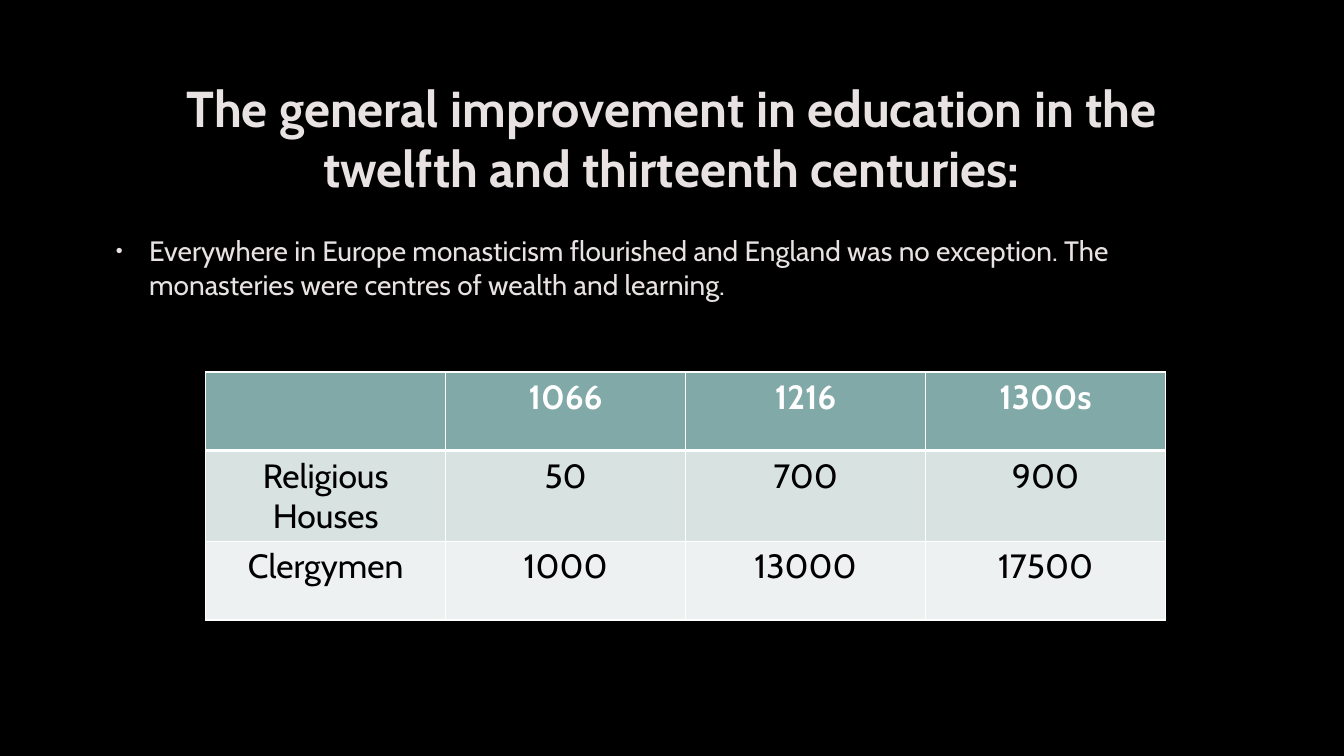
import pptx
import pptx.dml.color
import pptx.enum.text
import pptx.oxml
import pptx.oxml.ns
import pptx.util
from dataclasses import dataclass
from pptx.util import Inches

FONT = "Cabin"
COLORS = {
    "background": "000000",
    "pale": "E8E2E2",
    "outline": "404040",
    "white": "FFFFFF",
    "black": "000000",
    "header": "80A9A7",
    "band_dark": "D8E2E1",
    "band_light": "EDF1F1",
}
ALIGN = pptx.enum.text.PP_ALIGN
ANCHOR = pptx.enum.text.MSO_ANCHOR


@dataclass
class TableRow:
    values: tuple[str, ...]
    fill: str
    color: str = "black"
    bold: bool = False
    bottom_border: float = 1


TABLE_ROWS = [
    TableRow(("", "1066", "1216", "1300s"), "header", "white", True, 3),
    TableRow(("Religious Houses", "50", "700", "900"), "band_dark"),
    TableRow(("Clergymen", "1000", "13000", "17500"), "band_light"),
]


def rgb(name: str) -> pptx.dml.color.RGBColor:
    return pptx.dml.color.RGBColor.from_string(COLORS[name])


def line_xml(tag: str, color: str, width: float, alpha: int = 100):
    """Build a solid line element for text outlines and cell borders."""
    return pptx.oxml.parse_xml(
        f'<a:{tag} {pptx.oxml.ns.nsdecls("a")} w="{int(pptx.util.Pt(width))}">'
        f'<a:solidFill><a:srgbClr val="{COLORS[color]}">'
        f'<a:alpha val="{alpha * 1000}"/></a:srgbClr></a:solidFill></a:{tag}>')


def write(frame, text: str, *, size: float, color: str, bold: bool = False,
          align=ALIGN.LEFT, outlined: bool = False):
    """Write one formatted paragraph and return it."""
    paragraph = frame.paragraphs[0]
    paragraph.alignment = align
    run = paragraph.add_run()
    run.text = text
    run.font.name = FONT
    run.font.size = pptx.util.Pt(size)
    run.font.bold = bold
    run.font.color.rgb = rgb(color)
    if outlined:
        run.font._element.insert(0, line_xml("ln", "outline", 0.75, 10))
    return paragraph


def add_frame(slide, top: float, height: float, anchor):
    frame = slide.shapes.add_textbox(
        Inches(1), Inches(top), Inches(11.32), Inches(height)).text_frame
    frame.word_wrap = True
    frame.vertical_anchor = anchor
    return frame


def add_bullet(paragraph) -> None:
    properties = paragraph._p.get_or_add_pPr()
    properties.set("marL", str(int(Inches(0.38))))
    properties.set("indent", str(int(Inches(-0.33))))
    for bullet_part in (
            f'<a:buClr {{ns}}><a:srgbClr val="{COLORS["pale"]}"/></a:buClr>',
            '<a:buSzPct {ns} val="70000"/>',
            '<a:buFont {ns} typeface="Arial"/>',
            '<a:buChar {ns} char="•"/>'):
        properties.append(pptx.oxml.parse_xml(
            bullet_part.format(ns=pptx.oxml.ns.nsdecls("a"))))


def add_numbers_table(slide, rows: list[TableRow]) -> None:
    column_count = len(rows[0].values)
    table = slide.shapes.add_table(
        len(rows), column_count, Inches(2.04), Inches(3.69),
        Inches(9.52), Inches(0.78 * len(rows))).table
    for column in table.columns:
        column.width = Inches(2.38)
    top_border = 1.0
    for row_index, row in enumerate(rows):
        table.rows[row_index].height = Inches(0.78)
        for column_index, value in enumerate(row.values):
            cell = table.cell(row_index, column_index)
            cell.fill.solid()
            cell.fill.fore_color.rgb = rgb(row.fill)
            borders = {"lnL": 1, "lnR": 1, "lnT": top_border,
                       "lnB": row.bottom_border}
            for position, (side, width) in enumerate(borders.items()):
                cell._tc.get_or_add_tcPr().insert(
                    position, line_xml(side, "white", width))
            if value:
                write(cell.text_frame, value, size=24, color=row.color,
                      bold=row.bold, align=ALIGN.CENTER)
        top_border = row.bottom_border


def main() -> None:
    deck = pptx.Presentation()
    deck.slide_width, deck.slide_height = Inches(13.33), Inches(7.5)
    slide = deck.slides.add_slide(deck.slide_layouts[6])
    slide.background.fill.solid()
    slide.background.fill.fore_color.rgb = rgb("background")

    # Title
    write(add_frame(slide, 0.67, 1.38, ANCHOR.MIDDLE),
          "The general improvement in education in the twelfth and "
          "thirteenth centuries:",
          size=36, color="pale", bold=True, align=ALIGN.CENTER, outlined=True)

    # Statement on monasticism
    monasticism = write(
        add_frame(slide, 2.27, 4.06, ANCHOR.TOP),
        "Everywhere in Europe monasticism flourished and England was no "
        "exception. The monasteries were centres of wealth and learning.",
        size=20, color="pale", outlined=True)
    monasticism.space_before = pptx.util.Pt(4)
    monasticism.space_after = pptx.util.Pt(6)
    add_bullet(monasticism)

    # Houses and clergymen by date
    add_numbers_table(slide, TABLE_ROWS)

    deck.save("out.pptx")


if __name__ == "__main__":
    main()
